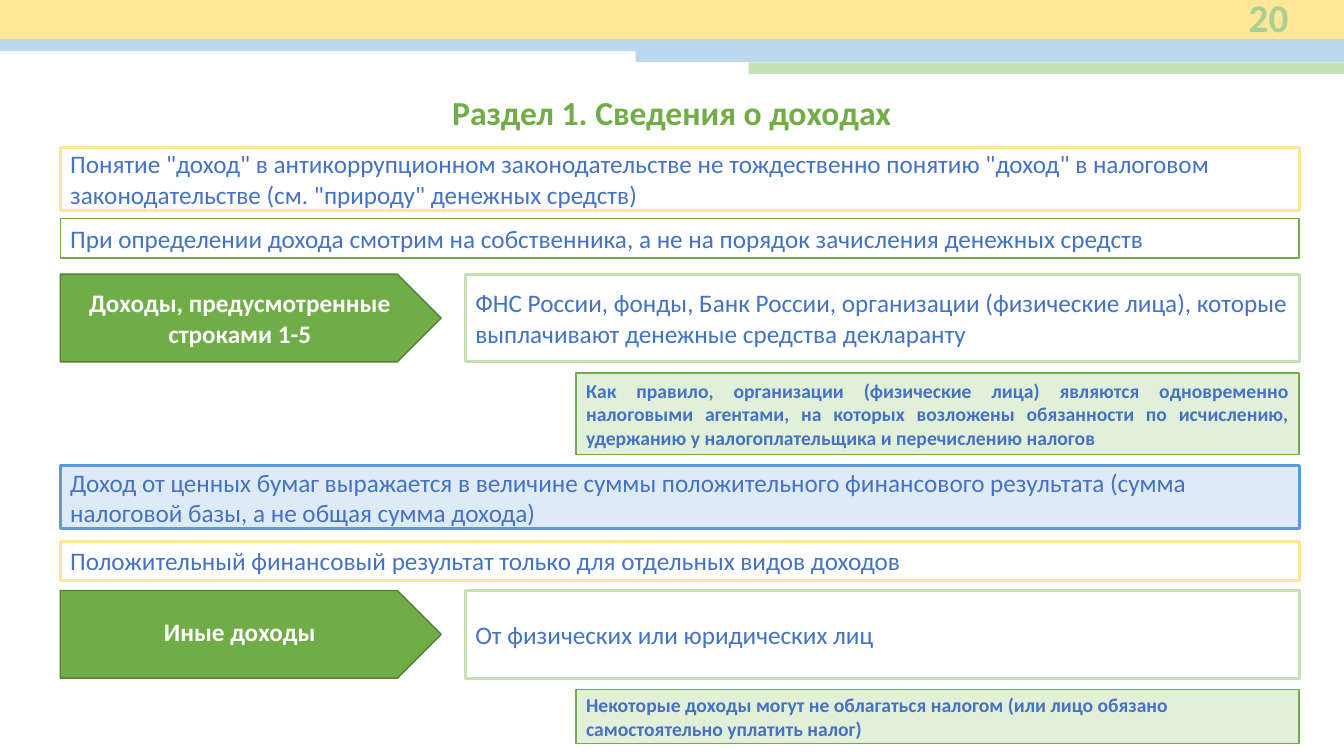
from pptx import Presentation
from pptx.dml.color import RGBColor
from pptx.enum.shapes import MSO_SHAPE
from pptx.enum.text import MSO_ANCHOR, MSO_AUTO_SIZE, PP_ALIGN
from pptx.util import Cm, Pt

YELLOW = RGBColor(0xFF, 0xE6, 0x99)
LIGHT_BLUE = RGBColor(0xBD, 0xD7, 0xEE)
PALE_BLUE = RGBColor(0xDE, 0xEB, 0xF7)
BLUE = RGBColor(0x5B, 0x9B, 0xD5)
TEXT_BLUE = RGBColor(0x44, 0x72, 0xC4)
LIGHT_GREEN = RGBColor(0xC5, 0xE0, 0xB4)
PALE_GREEN = RGBColor(0xE2, 0xF0, 0xD9)
NUMBER_GREEN = RGBColor(0xA9, 0xD1, 0x8E)
GREEN = RGBColor(0x70, 0xAD, 0x47)
DARK_GREEN = RGBColor(0x53, 0x80, 0x35)
WHITE = RGBColor(0xFF, 0xFF, 0xFF)

SLIDE_WIDTH = 33.87
LEFT = 1.52
RIGHT = 32.74
ARROW_WIDTH = 9.6
SOURCE_LEFT = 11.73
NOTE_LEFT = 14.52
ONE_LINE = 0.99
TWO_LINES = 1.6
ARROW_HEIGHT = 2.21


class IncomeSlide:
    font_name = "Calibri"

    def __init__(self, presentation):
        self.slide = presentation.slides.add_slide(presentation.slide_layouts[5])

    def set_text(self, shape, text, size, color, bold=False, align=PP_ALIGN.LEFT,
                 anchor=MSO_ANCHOR.MIDDLE):
        frame = shape.text_frame
        frame.text = text
        frame.word_wrap = True
        frame.auto_size = MSO_AUTO_SIZE.NONE
        frame.vertical_anchor = anchor
        paragraph = frame.paragraphs[0]
        paragraph.alignment = align
        font = paragraph.font
        font.name = self.font_name
        font.size = Pt(size)
        font.bold = bold
        font.color.rgb = color
        return paragraph

    def title(self, text):
        shape = self.slide.shapes.title
        shape.left, shape.top = Cm(LEFT), Cm(2.18)
        shape.width, shape.height = Cm(30.81), Cm(1.27)
        self.set_text(shape, text, 24, GREEN, True, PP_ALIGN.CENTER, MSO_ANCHOR.TOP)

    def number(self, text):
        shape = self.slide.shapes.add_textbox(Cm(29.54), Cm(-0.13), Cm(3.18), Cm(1.12))
        self.set_text(shape, text, 28, NUMBER_GREEN, True, PP_ALIGN.RIGHT)

    def shape(self, left, top, right, height, fill=None, line=None, weight=1.0,
              kind=MSO_SHAPE.RECTANGLE):
        shape = self.slide.shapes.add_shape(
            kind, Cm(left), Cm(top), Cm(right - left), Cm(height))
        shape.shadow.inherit = False
        if fill is None:
            shape.fill.background()
        else:
            shape.fill.solid()
            shape.fill.fore_color.rgb = fill
        if line is None:
            shape.line.fill.background()
        else:
            shape.line.color.rgb = line
            shape.line.width = Pt(weight)
        return shape

    def box(self, text, left, top, height, line, weight=2.25, fill=None):
        shape = self.shape(left, top, RIGHT, height, fill, line, weight)
        self.set_text(shape, text, 18, TEXT_BLUE)

    def arrow(self, text, top):
        shape = self.shape(LEFT, top, LEFT + ARROW_WIDTH, ARROW_HEIGHT, GREEN,
                           DARK_GREEN, kind=MSO_SHAPE.PENTAGON)
        return self.set_text(shape, text, 18, WHITE, True, PP_ALIGN.CENTER)

    def note(self, text, top, height, align):
        shape = self.shape(NOTE_LEFT, top, RIGHT, height, PALE_GREEN, GREEN)
        self.set_text(shape, text, 14, TEXT_BLUE, True, align)


def main():
    presentation = Presentation()
    presentation.slide_width = Cm(SLIDE_WIDTH)
    presentation.slide_height = Cm(19.05)
    page = IncomeSlide(presentation)

    for left, top, height, color in (
        (0, 0, 0.99, YELLOW),
        (0, 0.99, 0.3, LIGHT_BLUE),
        (16.02, 1.27, 0.3, LIGHT_BLUE),
        (18.87, 1.57, 0.3, LIGHT_GREEN),
    ):
        page.shape(left, top, SLIDE_WIDTH, height, color)
    page.number("20")
    page.title("Раздел 1. Сведения о доходах")

    page.box('Понятие "доход" в антикоррупционном законодательстве не тождественно '
             'понятию "доход" в налоговом законодательстве (см. "природу" денежных '
             'средств)', LEFT, 3.71, TWO_LINES, YELLOW)
    page.box("При определении дохода смотрим на собственника, а не на порядок "
             "зачисления денежных средств", LEFT, 5.51, ONE_LINE, GREEN, 1)

    page.arrow("Доходы, предусмотренные строками 1-5", 6.91)
    page.box("ФНС России, фонды, Банк России, организации (физические лица), "
             "которые выплачивают денежные средства декларанту",
             SOURCE_LEFT, 6.91, ARROW_HEIGHT, LIGHT_GREEN)
    page.note("Как правило, организации (физические лица) являются одновременно "
              "налоговыми агентами, на которых возложены обязанности по исчислению, "
              "удержанию у налогоплательщика и перечислению налогов",
              9.4, 2.06, PP_ALIGN.JUSTIFY)

    page.box("Доход от ценных бумаг выражается в величине суммы положительного "
             "финансового результата (сумма налоговой базы, а не общая сумма дохода)",
             LEFT, 11.73, TWO_LINES, BLUE, fill=PALE_BLUE)
    page.box("Положительный финансовый результат только для отдельных видов доходов",
             LEFT, 13.64, ONE_LINE, YELLOW)

    other_income = page.arrow("Иные доходы", 14.88)
    other_income.line_spacing = 0.8
    page.box("От физических или юридических лиц",
             SOURCE_LEFT, 14.88, ARROW_HEIGHT, LIGHT_GREEN)
    page.note("Некоторые доходы могут не облагаться налогом (или лицо обязано "
              "самостоятельно уплатить налог)", 17.37, 1.37, PP_ALIGN.LEFT)

    presentation.save("out.pptx")


if __name__ == "__main__":
    main()
